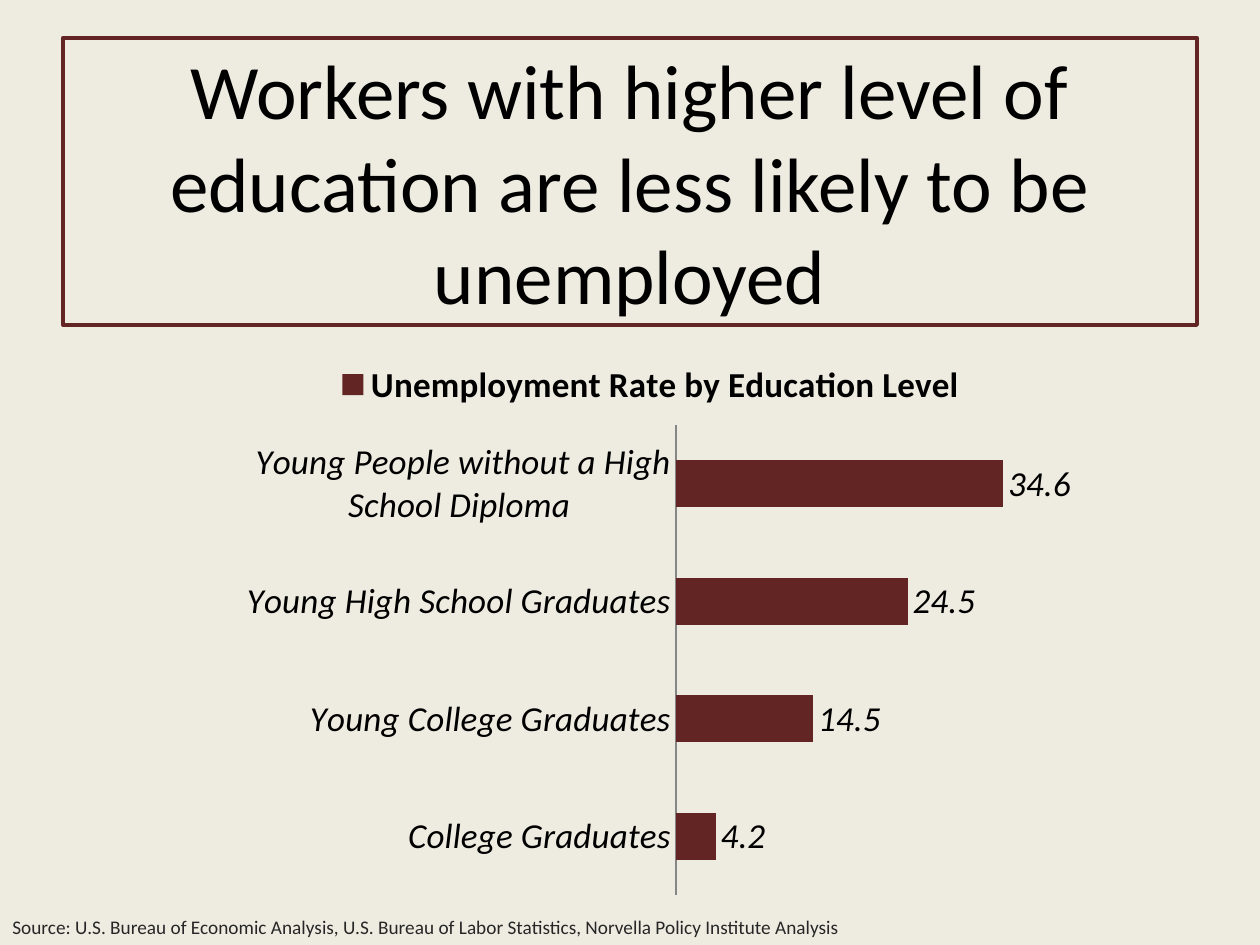
from lxml import etree
from pptx import Presentation
from pptx.chart.data import CategoryChartData
from pptx.dml.color import RGBColor
from pptx.enum.chart import XL_CHART_TYPE, XL_LABEL_POSITION, XL_LEGEND_POSITION, XL_TICK_LABEL_POSITION, XL_TICK_MARK
from pptx.enum.text import MSO_ANCHOR, MSO_AUTO_SIZE, PP_ALIGN
from pptx.oxml.ns import qn
from pptx.util import Cm, Pt

BAR = XL_CHART_TYPE.BAR_CLUSTERED
LABEL_END = XL_LABEL_POSITION.OUTSIDE_END
LEGEND_TOP = XL_LEGEND_POSITION.TOP
NO_TICK_LABELS = XL_TICK_LABEL_POSITION.NONE
NO_TICK = XL_TICK_MARK.NONE
MIDDLE = MSO_ANCHOR.MIDDLE
NO_FIT = MSO_AUTO_SIZE.NONE
CENTER = PP_ALIGN.CENTER
LEFT = PP_ALIGN.LEFT

FONT = "Calibri"
CREAM = "EEECE1"
MAROON = "632523"
BLACK = "000000"
CHARCOAL = "262626"
GRAY = "868686"

TITLE = "Workers with higher level of education are less likely to be unemployed"
SOURCE = ("Source: U.S. Bureau of Economic Analysis, U.S. Bureau of Labor Statistics, "
          "Norvella Policy Institute Analysis")
RATES = {
    "College Graduates": 4.2,
    "Young College Graduates": 14.5,
    "Young High School Graduates": 24.5,
    "Young People without a High School Diploma ": 34.6,
}
PLOT_AREA = {"x": 0.53, "y": 0.14, "w": 0.45, "h": 0.84}


def color(value):
    return RGBColor.from_string(value)


def fill(target, value):
    target.fill.solid()
    target.fill.fore_color.rgb = color(value)


def style_font(font, size, value=BLACK, bold=False, italic=False):
    font.name = FONT
    font.size = Pt(size)
    font.bold = bold
    font.italic = italic
    font.color.rgb = color(value)


def write_text(box, text, size, value, alignment):
    frame = box.text_frame
    frame.word_wrap = True
    frame.auto_size = NO_FIT
    frame.vertical_anchor = MIDDLE
    para = frame.paragraphs[0]
    para.alignment = alignment
    span = para.add_run()
    span.text = text
    style_font(span.font, size, value)


def add_title(page):
    box = page.shapes.title
    box.left, box.top, box.width, box.height = Cm(1.27), Cm(0.76), Cm(22.86), Cm(5.79)
    box.line.color.rgb = color(MAROON)
    box.line.width = Pt(2.25)
    write_text(box, TITLE, 44, BLACK, CENTER)


def place_plot_area(chart):
    plot_area = chart.plots[0]._element.getparent()
    for old in plot_area.findall(qn("c:layout")):
        plot_area.remove(old)
    layout = etree.Element(qn("c:layout"))
    manual = etree.SubElement(layout, qn("c:manualLayout"))
    settings = {"layoutTarget": "inner", "xMode": "edge", "yMode": "edge", **PLOT_AREA}
    for name, value in settings.items():
        etree.SubElement(manual, qn(f"c:{name}")).set("val", str(value))
    plot_area.insert(0, layout)


def style_axes(chart):
    categories = chart.category_axis
    categories.major_tick_mark = NO_TICK
    categories.has_major_gridlines = False
    categories.format.line.color.rgb = color(GRAY)
    style_font(categories.tick_labels.font, 20, italic=True)
    values = chart.value_axis
    values.minimum_scale = 0
    values.maximum_scale = 40
    values.has_major_gridlines = False
    values.tick_label_position = NO_TICK_LABELS
    values.visible = False


def style_bars(plot):
    plot.gap_width = 150
    plot.overlap = -25
    plot.vary_by_categories = False
    fill(plot.series[0].format, MAROON)
    plot.has_data_labels = True
    labels = plot.data_labels
    labels.show_value = True
    labels.position = LABEL_END
    style_font(labels.font, 20, italic=True)


def add_rate_chart(page):
    data = CategoryChartData(number_format="General")
    data.categories = list(RATES)
    data.add_series("Unemployment Rate by Education Level", list(RATES.values()))
    frame = page.shapes.add_chart(BAR, Cm(4.65), Cm(6.99), Cm(16.94), Cm(11.28), data)
    chart = frame.chart
    style_font(chart.font, 18)
    chart.has_title = False
    chart.has_legend = True
    chart.legend.position = LEGEND_TOP
    chart.legend.include_in_layout = False
    style_font(chart.legend.font, 20, bold=True)
    style_axes(chart)
    style_bars(chart.plots[0])
    place_plot_area(chart)


def add_source(page):
    box = page.shapes.add_textbox(Cm(0), Cm(18.31), Cm(17.75), Cm(0.74))
    write_text(box, SOURCE, 11, CHARCOAL, LEFT)


def main():
    deck = Presentation()
    deck.slide_width, deck.slide_height = Cm(25.4), Cm(19.05)
    page = deck.slides.add_slide(deck.slide_layouts[5])
    fill(page.background, CREAM)
    add_title(page)
    add_rate_chart(page)
    add_source(page)
    deck.save("out.pptx")


if __name__ == "__main__":
    main()
